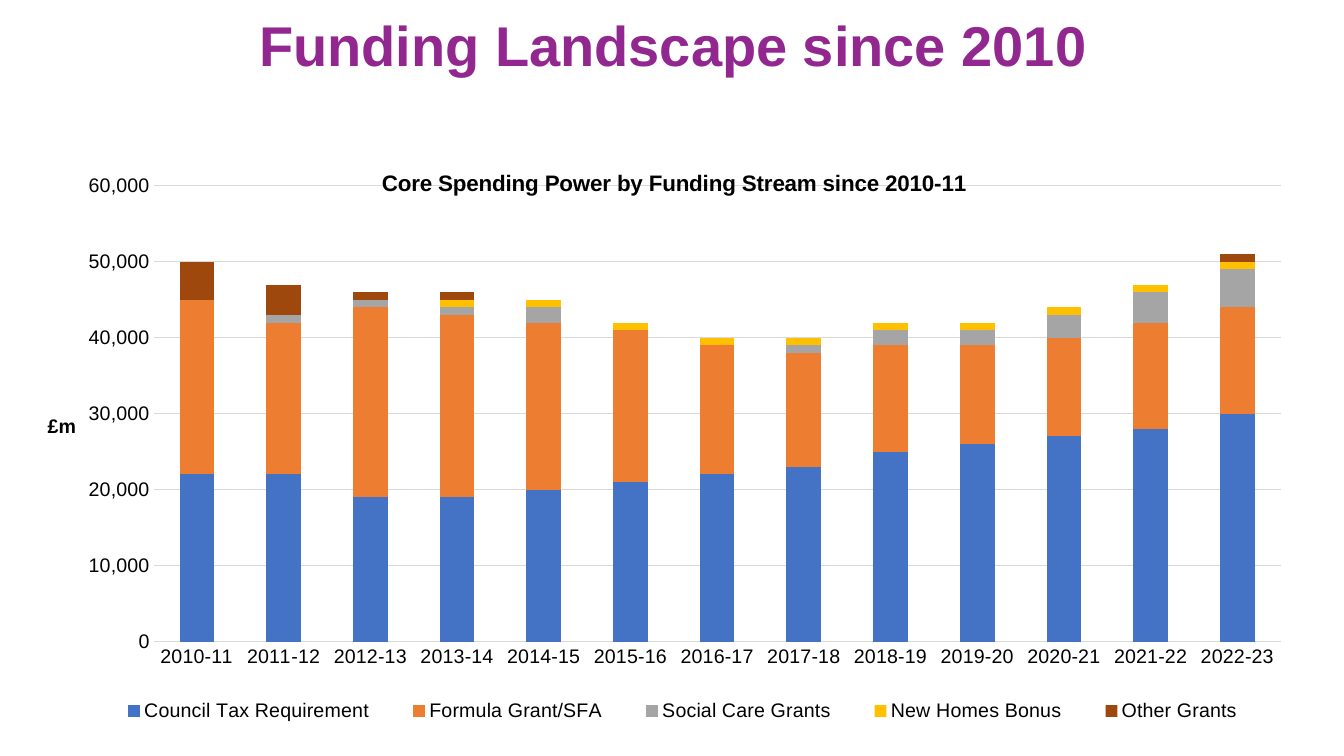
from lxml import etree
from pptx import Presentation
from pptx import util as u
from pptx.chart import data as cd
from pptx.dml.color import RGBColor
from pptx.enum import chart as ch, text
from pptx.oxml import ns

WIDE, HIGH = u.Inches(13.33), u.Inches(7.5)
FACE = "Arial"
YEARS = [f"{year}-{(year + 1) % 100}" for year in range(2010, 2023)]
STREAMS = [
    ("Council Tax Requirement", "4472C4", [22, 22, 19, 19, 20, 21, 22, 23, 25, 26, 27, 28, 30]),
    ("Formula Grant/SFA", "ED7D31", [23, 20, 25, 24, 22, 20, 17, 15, 14, 13, 13, 14, 14]),
    ("Social Care Grants", "A5A5A5", [0, 1, 1, 1, 2, 0, 0, 1, 2, 2, 3, 4, 5]),
    ("New Homes Bonus", "FFC000", [0] * 3 + [1] * 10),
    ("Other Grants", "9E480E", [5, 4, 1, 1] + [0] * 8 + [1]),
]


def paint(target, shade):
    """Give a font colour or a fill fore colour its hex value."""
    target.rgb = RGBColor.from_string(shade)


def style(font, size, bold=False, shade="000000"):
    """Set the face, size, weight and colour of a font."""
    font.name, font.size, font.bold = FACE, u.Pt(size), bold
    paint(font.color, shade)


def write(frame, words, size, shade="000000"):
    """Add one bold run to the first paragraph and return the paragraph."""
    para = frame.paragraphs[0]
    run = para.add_run()
    run.text = words
    style(run.font, size, True, shade)
    return para


def rule(line):
    """Draw a thin grey line."""
    line.width = u.Pt(0.75)
    paint(line.color, "D9D9D9")


def pin(node, prior, **shares):
    """Place a chart part by shares of the chart, after its prior child."""
    for old in node.findall(ns.qn("c:layout")):
        node.remove(old)
    layout = etree.Element(ns.qn("c:layout"))
    manual = etree.SubElement(layout, ns.qn("c:manualLayout"))
    if prior is None:
        etree.SubElement(manual, ns.qn("c:layoutTarget")).set("val", "inner")
        node.insert(0, layout)
    else:
        node.find(ns.qn(prior)).addnext(layout)
    for side in "xy":
        etree.SubElement(manual, ns.qn(f"c:{side}Mode")).set("val", "edge")
    for side, share in shares.items():
        etree.SubElement(manual, ns.qn(f"c:{side}")).set("val", str(share))


def add_head(slide):
    """Fill the title placeholder."""
    head = slide.shapes.title
    head.left, head.top = int(WIDE * 0.177), 0
    head.width, head.height = int(WIDE * 0.647), int(HIGH * 0.116)
    frame = head.text_frame
    frame.word_wrap = True
    frame.auto_size = text.MSO_AUTO_SIZE.NONE
    frame.vertical_anchor = text.MSO_ANCHOR.MIDDLE
    para = write(frame, "Funding Landscape since 2010", 40, "91278F")
    para.alignment = text.PP_ALIGN.CENTER
    para.space_after = u.Pt(6)


def add_bars(slide):
    """Add the stacked columns and return the chart."""
    data = cd.CategoryChartData(number_format="#,##0")
    data.categories = YEARS
    for name, _, sums in STREAMS:
        data.add_series(name, [1000 * value for value in sums])
    frame = slide.shapes.add_chart(
        ch.XL_CHART_TYPE.COLUMN_STACKED, int(WIDE * 0.03), int(HIGH * 0.187),
        int(WIDE * 0.937), int(HIGH * 0.785), data)
    chart = frame.chart
    style(chart.font, 10)
    plot = chart.plots[0]
    plot.gap_width, plot.overlap, plot.vary_by_categories = 150, 100, False
    for bars, (_, shade, _) in zip(plot.series, STREAMS):
        bars.format.fill.solid()
        paint(bars.format.fill.fore_color, shade)
        bars.invert_if_negative = False
    area = chart.element.find(".//" + ns.qn("c:plotArea"))
    pin(area, None, x=0.09, y=0.075, w=0.895, h=0.768)
    return chart


def set_axes(chart):
    """Format both axes and the gridlines."""
    base, scale = chart.category_axis, chart.value_axis
    for axis in (base, scale):
        axis.major_tick_mark = axis.minor_tick_mark = ch.XL_TICK_MARK.NONE
        style(axis.tick_labels.font, 14)
    rule(base.format.line)
    rule(scale.major_gridlines.format.line)
    scale.format.line.fill.background()
    scale.minimum_scale, scale.maximum_scale, scale.major_unit = 0, 60000, 10000
    scale.tick_labels.number_format = "#,##0"
    scale.tick_labels.number_format_is_linked = False
    title = scale.axis_title
    write(title.text_frame, "£m", 14)
    body = title._element.find(".//" + ns.qn("a:bodyPr"))
    body.set("rot", "0")
    body.set("vert", "horz")
    pin(title._element, "c:tx", x=0.003, y=0.453)


def set_labels(chart):
    """Add the chart title and the legend."""
    chart.has_title = True
    write(chart.chart_title.text_frame,
          "Core Spending Power by Funding Stream since 2010-11", 16)
    pin(chart.chart_title._element, "c:tx", x=0.268, y=0.04)
    chart.has_legend = True
    legend = chart.legend
    legend.position = ch.XL_LEGEND_POSITION.BOTTOM
    legend.include_in_layout = False
    style(legend.font, 14)
    pin(legend._element, "c:legendPos", x=0.04, y=0.93, w=0.94, h=0.06)


def main():
    """Build the slide and save it."""
    deck = Presentation()
    deck.slide_width, deck.slide_height = WIDE, HIGH
    slide = deck.slides.add_slide(deck.slide_layouts[5])
    add_head(slide)
    chart = add_bars(slide)
    set_axes(chart)
    set_labels(chart)
    deck.save("out.pptx")


if __name__ == "__main__":
    main()
